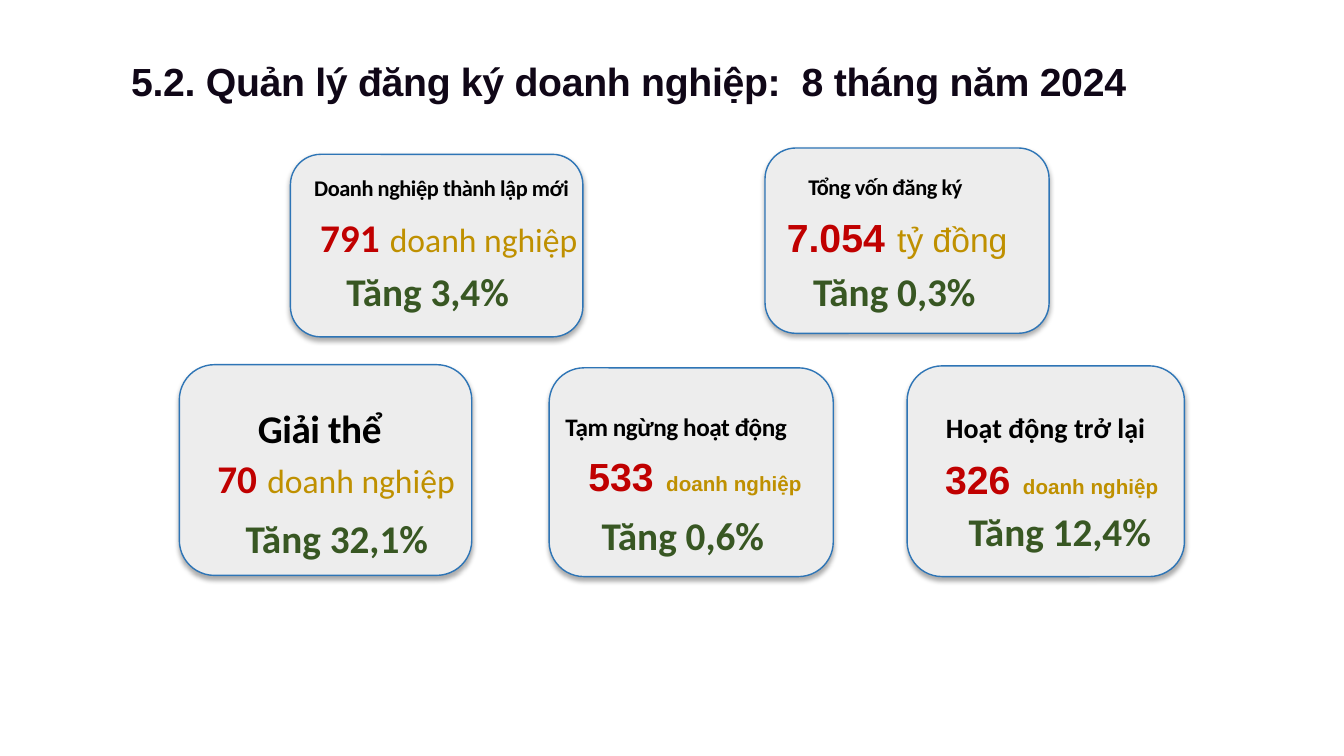
from dataclasses import dataclass

from lxml.etree import SubElement
from pptx import Presentation
from pptx.dml.color import RGBColor
from pptx.enum.shapes import MSO_SHAPE
from pptx.enum.text import MSO_ANCHOR, PP_ALIGN
from pptx.oxml.ns import qn
from pptx.util import Cm, Pt


@dataclass(frozen=True)
class Theme:
    heading: str = "100717"
    label: str = "000000"
    number: str = "C00000"
    unit: str = "BF9000"
    change: str = "385723"
    card: str = "EDEDED"
    border: str = "2E75B6"
    sans: str = "Arial"
    body: str = "Calibri"
    large: float = 28
    gap: float = 32
    unit_large: float = 24
    unit_small: float = 14.7


THEME = Theme()


def style(font, size, color, bold=True, name=None):
    font.size, font.bold = Pt(size), bold
    font.color.rgb = RGBColor.from_string(color)
    if name:
        font.name = name


def add_line(shapes, area, runs, name, align=PP_ALIGN.LEFT, tracking=0):
    """Add one line of text; each run is (text, size, color, bold)."""
    frame = shapes.add_textbox(*map(Cm, area)).text_frame
    frame.word_wrap = True
    line = frame.paragraphs[0]
    line.alignment = align
    line.font.name = name
    if len(runs) == 1:
        style(line.font, *runs[0][1:])
    for text, *look in runs:
        run = line.add_run()
        run.text = text
        if len(runs) > 1:
            style(run.font, *look)
        if tracking:
            run.font._element.set("spc", str(tracking))


prs = Presentation()
prs.slide_width, prs.slide_height = Cm(33.87), Cm(19.05)
slide = prs.slides.add_slide(prs.slide_layouts[5])

# Heading
title = slide.shapes.title
title.left, title.top, title.width, title.height = Cm(3.05), Cm(1.32), Cm(25.93), Cm(1.45)
title.text_frame.text = "5.2. Quản lý đăng ký doanh nghiệp:  8 tháng năm 2024"
title.text_frame.vertical_anchor = MSO_ANCHOR.TOP
heading = title.text_frame.paragraphs[0]
heading.alignment = PP_ALIGN.LEFT
heading.line_spacing, heading.space_before = 1.0, Pt(3)
style(heading.font, THEME.large, THEME.heading, name=THEME.sans)
heading.runs[0].font._element.set("spc", "-20")

# Cards: box; label, its size, tracking, alignment and area;
# number, unit, font, unit size, unit bold and area; change and its area
LEFT, CENTER = PP_ALIGN.LEFT, PP_ALIGN.CENTER
cards = [
    ((19.28, 3.73, 7.16, 4.67),
     ("Tổng vốn đăng ký", 16, -30, LEFT, (20.12, 4.24, 5.21, 1.63)),
     ("7.054", "tỷ đồng", THEME.sans, THEME.unit_large, False, (19.58, 5.11, 6.15, 1.63)),
     ("Tăng 0,3%", (20.24, 6.6, 4.65, 1.45))),
    ((7.32, 3.89, 7.37, 4.6),
     ("Doanh nghiệp thành lập mới", 16, -30, LEFT, (7.67, 4.27, 7.01, 1.63)),
     ("791", "doanh nghiệp", THEME.body, THEME.unit_large, False, (7.82, 5.11, 7.06, 1.63)),
     ("Tăng 3,4%", (8.48, 6.6, 4.65, 1.45))),
    ((13.84, 9.27, 7.16, 5.26),
     ("Tạm ngừng hoạt động", 18, -30, LEFT, (14, 10.24, 7.11, 1.93)),
     ("533", "doanh nghiệp", THEME.sans, THEME.unit_small, True, (14.58, 11.13, 5.94, 1.83)),
     ("Tăng 0,6%", (14.91, 12.75, 4.65, 1.45))),
    ((22.86, 9.22, 6.99, 5.31),
     ("Hoạt động trở lại", 20, 0, CENTER, (23.57, 10.21, 5.56, 2.01)),
     ("326", "doanh nghiệp", THEME.sans, THEME.unit_small, True, (23.57, 11.2, 5.94, 1.63)),
     ("Tăng 12,4%", (24.16, 12.65, 5.16, 1.45))),
    ((4.52, 9.19, 7.37, 5.31),
     ("Giải thể", 28, -30, LEFT, (6.25, 10.06, 4.19, 2.46)),
     ("70", "doanh nghiệp", THEME.body, THEME.unit_large, False, (5.23, 11.18, 6.55, 1.88)),
     ("Tăng 32,1%", (5.94, 12.83, 5.16, 1.45))),
]

for box_area, label, value, change in cards:
    card = slide.shapes.add_group_shape().shapes

    # Rounded box with a soft shadow below it
    box = card.add_shape(MSO_SHAPE.ROUNDED_RECTANGLE, *map(Cm, box_area))
    box.fill.solid()
    box.fill.fore_color.rgb = RGBColor.from_string(THEME.card)
    box.line.color.rgb = RGBColor.from_string(THEME.border)
    box.line.width = Pt(1)
    box.shadow.inherit = False
    effects = box._element.spPr.find(qn("a:effectLst"))
    shadow = SubElement(effects, qn("a:outerShdw"), blurRad=str(Pt(3.5)),
                        dist=str(Pt(2.2)), dir="5400000", algn="t", rotWithShape="0")
    shade = SubElement(shadow, qn("a:srgbClr"), val="000000")
    SubElement(shade, qn("a:alpha"), val="32000")

    # Label
    text, size, tracking, align, area = label
    add_line(card, area, [(text, size, THEME.label, True)], THEME.body, align, tracking)

    # Number with its unit
    number, unit, font_name, unit_size, unit_bold, area = value
    add_line(card, area, [(number, THEME.large, THEME.number, True),
                          (" ", THEME.gap, THEME.change, True),
                          (unit, unit_size, THEME.unit, unit_bold)], font_name)

    # Change on the year before
    text, area = change
    add_line(card, area, [(text, THEME.large, THEME.change, True)], THEME.body)

prs.save("out.pptx")
